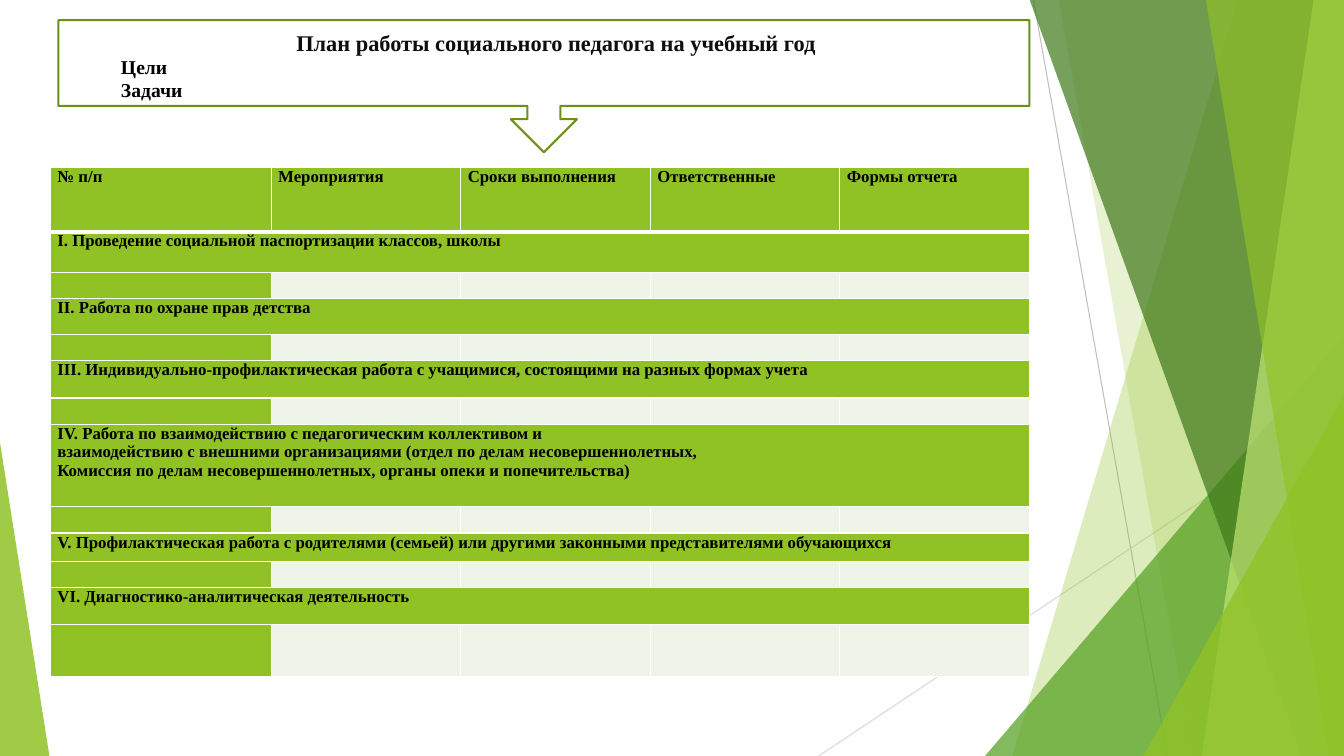
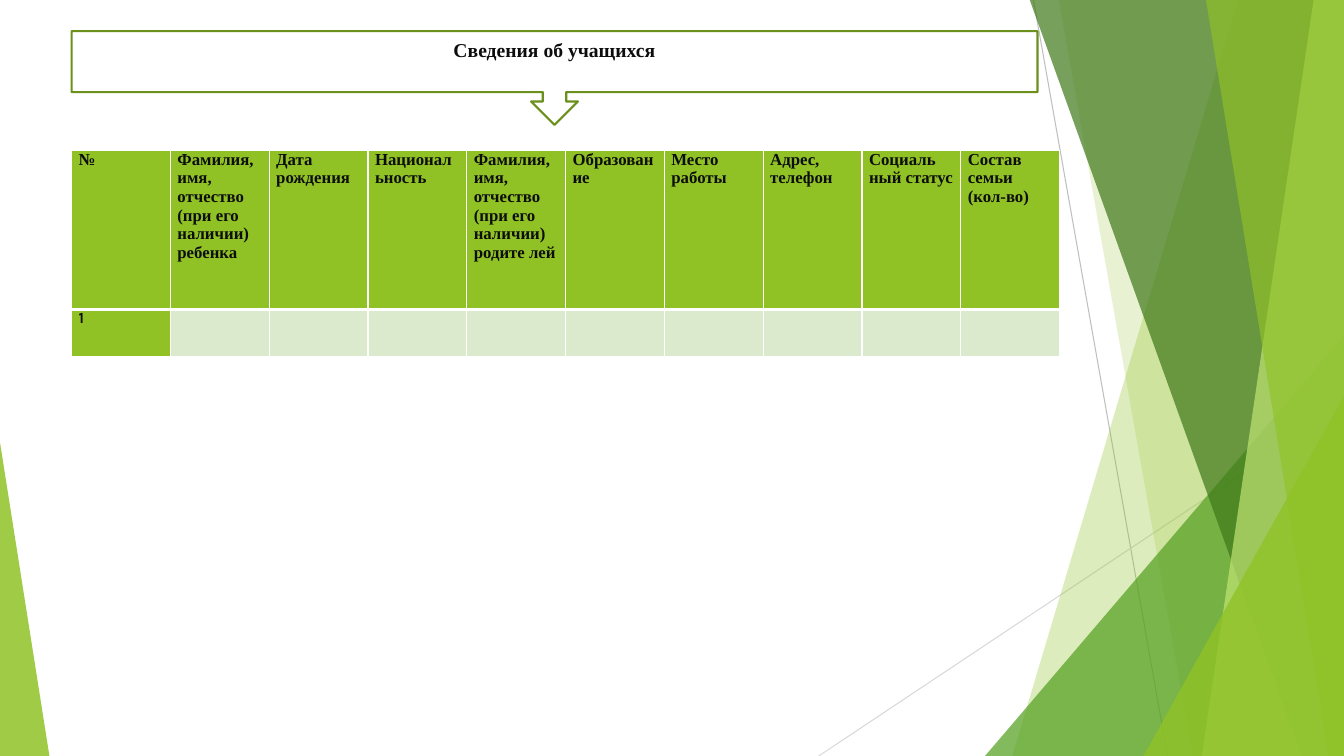
from lxml import etree
from pptx import Presentation, util as u
from pptx.dml.color import RGBColor
from pptx.enum import shapes, text
from pptx.oxml.ns import qn

Inches, Pt = u.Inches, u.Pt
WIDTH, HEIGHT = 13.33, 7.5
SERIF = "Times New Roman"
GREEN, MEADOW, FOREST, LIME = "90C226", "54A021", "3F7819", "C0E474"
OUTLINE, WHITE, BLACK, INK = "6B901C", "FFFFFF", "000000", "0D0D0D"
PALE, SOFT = "EEF4E8", "DBE9CD"

PLAN_HEADER = ["№ п/п", "Мероприятия", "Сроки выполнения", "Ответственные", "Формы отчета"]
PLAN_SECTIONS = [
    "І. Проведение социальной паспортизации классов, школы",
    "II. Работа по охране прав детства",
    "III. Индивидуально-профилактическая работа с учащимися, состоящими на разных формах учета",
    "IV. Работа по взаимодействию с педагогическим коллективом и\v"
    "взаимодействию с внешними организациями (отдел по делам несовершеннолетных,\v"
    "Комиссия по делам несовершеннолетных, органы опеки и попечительства)",
    "V. Профилактическая работа с родителями (семьей) или другими законными представителями обучающихся",
    "VI. Диагностико-аналитическая деятельность",
]
PLAN_HEIGHTS = [0.64, 0.4, 0.26, 0.36, 0.26, 0.37, 0.26, 0.82, 0.26, 0.28, 0.26, 0.37, 0.51]
PUPIL_HEADER = [
    "№", "Фамилия, имя, отчество (при его наличии) ребенка", "Дата рождения",
    "Национальность", "Фамилия, имя, отчество (при его наличии) родите лей",
    "Образование", "Место работы", "Адрес, телефон", "Социаль\nный статус",
    "Состав семьи\v(кол-во)",
]


def rgb(value):
    """Turn a hex string into a colour."""
    return RGBColor.from_string(value)


def box(left, top, width, height):
    """Convert a frame in inches to lengths."""
    return [Inches(side) for side in (left, top, width, height)]


def paint(shape, colour, opacity):
    """Fill a shape with a translucent colour and no outline."""
    shape.shadow.inherit = False
    shape.fill.solid()
    shape.fill.fore_color.rgb = rgb(colour)
    shape.line.fill.background()
    tint = shape.element.xpath(".//a:solidFill/a:srgbClr")[0]
    etree.SubElement(tint, qn("a:alpha")).set("val", str(opacity * 1000))
    return shape


def hairline(slide, start, end, colour):
    """Draw a thin straight line."""
    line = slide.shapes.add_connector(
        shapes.MSO_CONNECTOR.STRAIGHT, *[Inches(n) for n in (*start, *end)])
    line.line.color.rgb = rgb(colour)
    line.line.width = Pt(0.75)
    etree.SubElement(line.element.spPr, qn("a:effectLst"))
    return line


def band(slide, upper, lower, colour, opacity):
    """Draw a slanted band reaching from its left edge to the slide's right edge."""
    corners = [(WIDTH, -0.01), (WIDTH, HEIGHT), (lower, HEIGHT)]
    outline = slide.shapes.build_freeform(Inches(upper), Inches(-0.01), scale=1.0)
    outline.add_line_segments([(Inches(x), Inches(y)) for x, y in corners])
    return paint(outline.convert_to_shape(), colour, opacity)


def wedge(slide, left, top, width, apex, colour, opacity):
    """Draw a right triangle standing on the bottom edge."""
    triangle = slide.shapes.add_shape(
        shapes.MSO_SHAPE.ISOSCELES_TRIANGLE, *box(left, top, width, HEIGHT - top))
    triangle.adjustments[0] = apex
    return paint(triangle, colour, opacity)


def decorate_master(master, slide):
    """Build the shared facets and move them to the master."""
    facets = [
        hairline(slide, (10.25, 0), (11.58, HEIGHT), "BFBFBF"),
        hairline(slide, (WIDTH, 4.03), (8.12, HEIGHT), "D9D9D9"),
        band(slide, 12.28, 10.04, GREEN, 30),
        band(slide, 10.5, 11.83, GREEN, 20),
        wedge(slide, 9.77, 3.33, 3.56, 1, MEADOW, 72),
        band(slide, 10.21, 12.91, FOREST, 70),
        band(slide, 13.03, 11.92, LIME, 70),
        band(slide, 11.96, 13.18, GREEN, 65),
        wedge(slide, 11.34, 3.93, 1.99, 1, GREEN, 80),
        wedge(slide, 0, 4.39, 0.49, 0, GREEN, 85),
    ]
    for number, facet in enumerate(facets, 100):
        facet.element.xpath(".//p:cNvPr")[0].set("id", str(number))
        master.shapes.element.append(facet.element)


def add_text(paragraph, words, size, colour, font=SERIF, bold=True):
    """Add runs to a paragraph, with a line break at each vertical tab."""
    for index, line in enumerate(words.split("\v")):
        if index:
            paragraph.add_line_break()
        run = paragraph.add_run()
        run.text = line
        run.font.name = font
        run.font.size = Pt(size)
        run.font.bold = bold
        run.font.color.rgb = rgb(colour)


def fill_placeholder(holder, frame, lines, size, colour, align):
    """Place a placeholder and write plain lines without bullets."""
    holder.left, holder.top, holder.width, holder.height = box(*frame)
    body = holder.text_frame
    body.auto_size = text.MSO_AUTO_SIZE.NONE
    body.vertical_anchor = text.MSO_ANCHOR.MIDDLE
    body.margin_left = body.margin_right = body.margin_top = body.margin_bottom = 0
    for index, line in enumerate(lines):
        paragraph = body.add_paragraph() if index else body.paragraphs[0]
        paragraph.alignment = align
        paragraph.space_before = Pt(0)
        properties = paragraph._p.get_or_add_pPr()
        properties.set("marL", "0")
        properties.set("indent", "0")
        etree.SubElement(properties, qn("a:buNone"))
        add_text(paragraph, line, size, colour)


def add_callout(slide, frame):
    """Draw the outlined callout that points down to the table."""
    callout = slide.shapes.add_shape(shapes.MSO_SHAPE.DOWN_ARROW_CALLOUT, *box(*frame))
    callout.shadow.inherit = False
    callout.fill.background()
    callout.line.color.rgb = rgb(OUTLINE)
    callout.line.width = Pt(1.5)


def set_borders(cell, row):
    """Give a cell white borders, thick under the header row."""
    thick = {("lnB", 0), ("lnT", 1)}
    for side in ("lnL", "lnR", "lnT", "lnB"):
        border = etree.SubElement(cell._tc.get_or_add_tcPr(), qn(f"a:{side}"))
        border.set("w", str(Pt(3 if (side, row) in thick else 1)))
        solid = etree.SubElement(border, qn("a:solidFill"))
        etree.SubElement(solid, qn("a:srgbClr")).set("val", WHITE)


def fill_cell(cell, row, words, fill, style):
    """Format a cell and write its paragraphs."""
    set_borders(cell, row)
    cell.fill.solid()
    cell.fill.fore_color.rgb = rgb(fill)
    cell.margin_left = cell.margin_right = Inches(0.07)
    cell.margin_top = cell.margin_bottom = 0
    body = cell.text_frame
    for index, line in enumerate(words.split("\n")):
        paragraph = body.add_paragraph() if index else body.paragraphs[0]
        if line:
            add_text(paragraph, line, **style)
        else:
            paragraph._p.get_or_add_endParaRPr().set("sz", "1200")


def add_grid(slide, left, top, widths, heights, rows, pale, styles):
    """Add a table; a row holding one text becomes a full-width section."""
    frame = box(left, top, sum(widths), sum(heights))
    table = slide.shapes.add_table(len(heights), len(widths), *frame).table
    for column, width in zip(table.columns, widths):
        column.width = Inches(width)
    for r, (height, texts, style) in enumerate(zip(heights, rows, styles)):
        table.rows[r].height = Inches(height)
        section = len(texts) == 1
        padded = texts + [""] * (len(widths) - len(texts))
        for c, words in enumerate(padded):
            fill = GREEN if r == 0 or c == 0 or section else pale
            fill_cell(table.cell(r, c), r, words, fill, style)
        if section:
            table.cell(r, 0).merge(table.cell(r, len(widths) - 1))


def build_plan(slide):
    """Build the yearly work plan."""
    fill_placeholder(slide.shapes.title, (0.78, 0.29, 9.47, 0.26),
                     ["План работы социального педагога на учебный год"],
                     16, INK, text.PP_ALIGN.CENTER)
    fill_placeholder(slide.placeholders[1], (1.2, 0.55, 9, 0.45),
                     ["Цели", "Задачи"], 14, BLACK, text.PP_ALIGN.LEFT)
    add_callout(slide, (0.58, 0.2, 9.63, 1.31))
    rows = [PLAN_HEADER]
    for section in PLAN_SECTIONS:
        rows += [[section], [""] * len(PLAN_HEADER)]
    styles = [dict(size=12, colour=BLACK)] * len(rows)
    add_grid(slide, 0.5, 1.66, [2.19] + [1.88] * 4, PLAN_HEIGHTS, rows, PALE, styles)


def build_pupils(slide):
    """Build the pupil information form."""
    fill_placeholder(slide.shapes.title, (0.71, 0.37, 9.58, 0.24),
                     ["Сведения об учащихся"], 14, INK, text.PP_ALIGN.CENTER)
    add_callout(slide, (0.71, 0.31, 9.58, 0.93))
    count = len(PUPIL_HEADER)
    rows = [PUPIL_HEADER, ["1"] + [""] * (count - 1)]
    styles = [dict(size=12, colour=INK), dict(size=11, colour=INK, font="Karla")]
    add_grid(slide, 0.71, 1.49, [0.98] * count, [1.58, 0.47], rows, SOFT, styles)


def main():
    """Build and save the presentation."""
    deck = Presentation()
    deck.slide_width, deck.slide_height = Inches(WIDTH), Inches(HEIGHT)
    plan = deck.slides.add_slide(deck.slide_layouts[1])
    pupils = deck.slides.add_slide(deck.slide_layouts[5])
    decorate_master(deck.slide_master, plan)
    build_plan(plan)
    build_pupils(pupils)
    deck.save("out.pptx")


if __name__ == "__main__":
    main()
